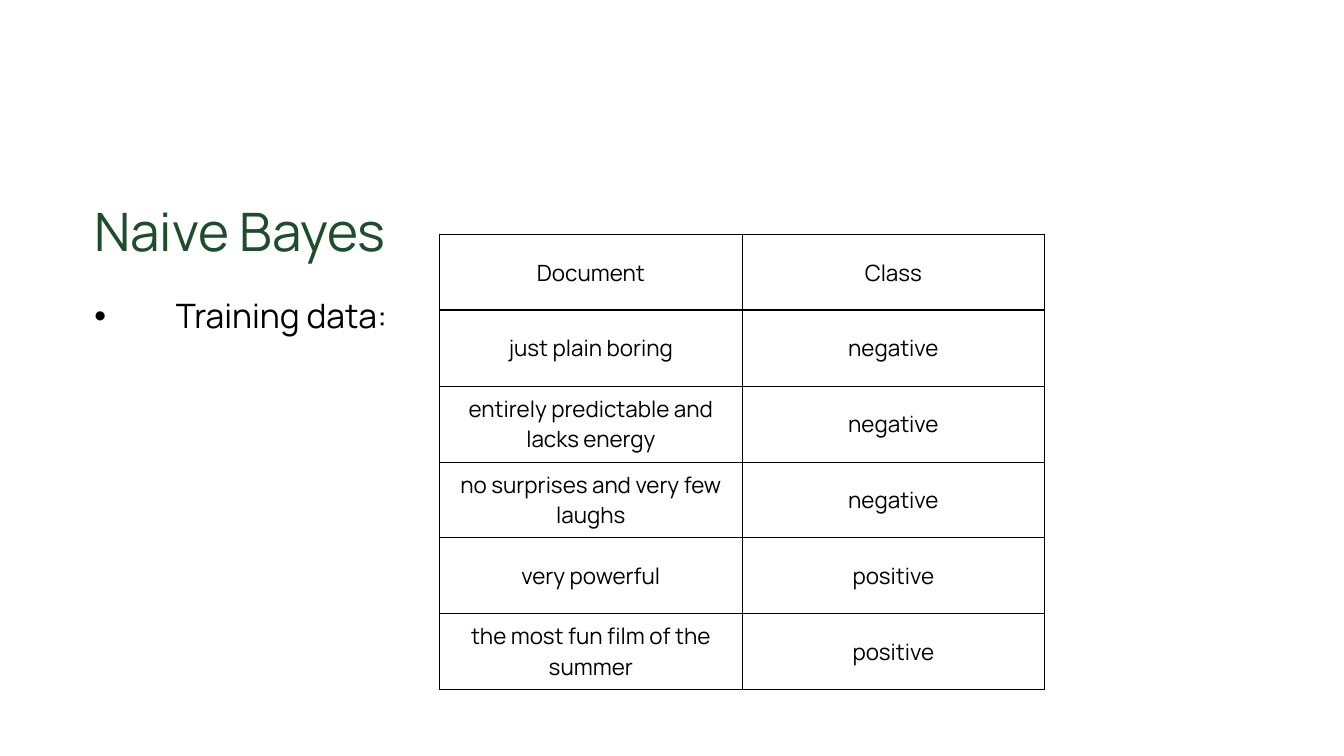
import pptx
import pptx.dml.color
import pptx.enum.text
import pptx.oxml
import pptx.oxml.ns
import pptx.util

Pt = pptx.util.Pt
RGBColor = pptx.dml.color.RGBColor
Align = pptx.enum.text.PP_ALIGN
Anchor = pptx.enum.text.MSO_ANCHOR
AutoSize = pptx.enum.text.MSO_AUTO_SIZE

GREEN = RGBColor(0x1E, 0x4D, 0x2B)
BLACK = RGBColor(0, 0, 0)
NS = pptx.oxml.ns.nsdecls("a")

TRAINING_DATA = [
    ("Document", "Class"),
    ("just plain boring", "negative"),
    ("entirely predictable and lacks energy", "negative"),
    ("no surprises and very few laughs", "negative"),
    ("very powerful", "positive"),
    ("the most fun film of the summer", "positive"),
]


def set_all(obj, values):
    for name, value in values.items():
        setattr(obj, name, value)


class Deck:
    font = "Manrope"
    inset = Pt(7.2)
    cell_inset = Pt(4.5)

    def __init__(self, width, height):
        self.prs = pptx.Presentation()
        set_all(self.prs, {"slide_width": Pt(width), "slide_height": Pt(height)})

    def add_slide(self):
        self.s = self.prs.slides.add_slide(self.prs.slide_layouts[1])

    def add_text(self, p, text, size, color, **fmt):
        set_all(p, fmt)
        r = p.add_run()
        r.text = text
        set_all(r.font, {"name": self.font, "size": Pt(size)})
        r.font.color.rgb = color

    def place(self, sp, box, anchor):
        """Move a placeholder and return its first paragraph."""
        set_all(sp, dict(zip(("left", "top", "width", "height"), map(Pt, box))))
        tf = sp.text_frame
        set_all(tf, {"auto_size": AutoSize.NONE, "word_wrap": True,
                     "vertical_anchor": anchor,
                     "margin_left": self.inset, "margin_right": self.inset,
                     "margin_top": self.inset, "margin_bottom": self.inset})
        return tf.paragraphs[0]

    def title(self, text, box):
        p = self.place(self.s.shapes.title, box, Anchor.MIDDLE)
        self.add_text(p, text, 75.7, GREEN, alignment=Align.LEFT)

    def bullets(self, items, box, indent):
        sp = self.s.placeholders[1]
        p = self.place(sp, box, Anchor.TOP)
        for i, text in enumerate(items):
            if i:
                p = sp.text_frame.add_paragraph()
            pPr = p._p.get_or_add_pPr()
            pPr.set("marL", str(Pt(indent)))
            pPr.set("indent", str(-Pt(indent)))
            pPr.append(pptx.oxml.parse_xml(f'<a:buChar {NS} char="•"/>'))
            self.add_text(p, text, 48, BLACK, line_spacing=0.9,
                          space_before=Pt(45 if i else 0))

    def borders(self, cell, widths):
        tcPr = cell._tc.get_or_add_tcPr()
        for side, width in widths.items():
            tcPr.append(pptx.oxml.parse_xml(
                f'<a:ln{side} {NS} w="{Pt(width)}"><a:solidFill>'
                f'<a:srgbClr val="{BLACK}"/></a:solidFill></a:ln{side}>'))

    def table(self, rows, left, top, col_width, row_height):
        n_rows, n_cols = len(rows), len(rows[0])
        table = self.s.shapes.add_table(
            n_rows, n_cols, Pt(left), Pt(top),
            Pt(n_cols * col_width), Pt(n_rows * row_height)).table
        set_all(table, {"first_row": False, "horz_banding": False})
        for i, row in enumerate(rows):
            table.rows[i].height = Pt(row_height)
            for j, text in enumerate(row):
                cell = table.cell(i, j)
                set_all(cell, {"vertical_anchor": Anchor.MIDDLE,
                               "margin_left": self.cell_inset,
                               "margin_right": self.cell_inset,
                               "margin_top": self.cell_inset,
                               "margin_bottom": self.cell_inset})
                self.borders(cell, {"L": 1, "R": 1, "T": 3 if i == 1 else 1,
                                    "B": 3 if i == 0 else 1})
                cell.fill.background()
                self.add_text(cell.text_frame.paragraphs[0], text, 32, BLACK,
                              alignment=Align.CENTER)


def main():
    deck = Deck(1920, 1080)
    deck.add_slide()
    deck.title("Naive Bayes", (127.5, 268.5, 1722, 121))
    deck.bullets(["Training data:"], (127.5, 420.5, 1722, 560), 116.64)
    deck.table(TRAINING_DATA, 628, 335, 432.2, 108.3)
    deck.prs.save("out.pptx")


if __name__ == "__main__":
    main()
